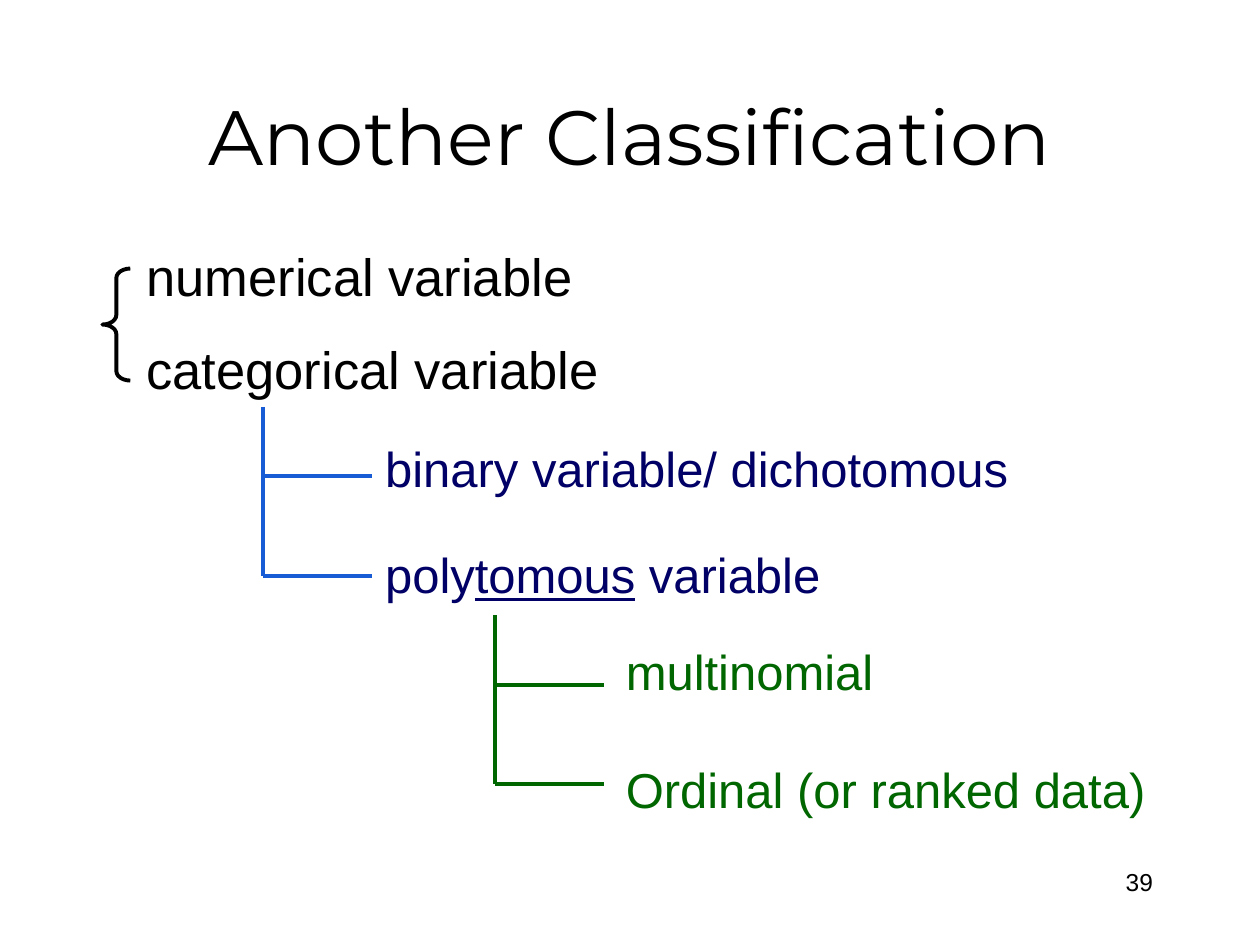
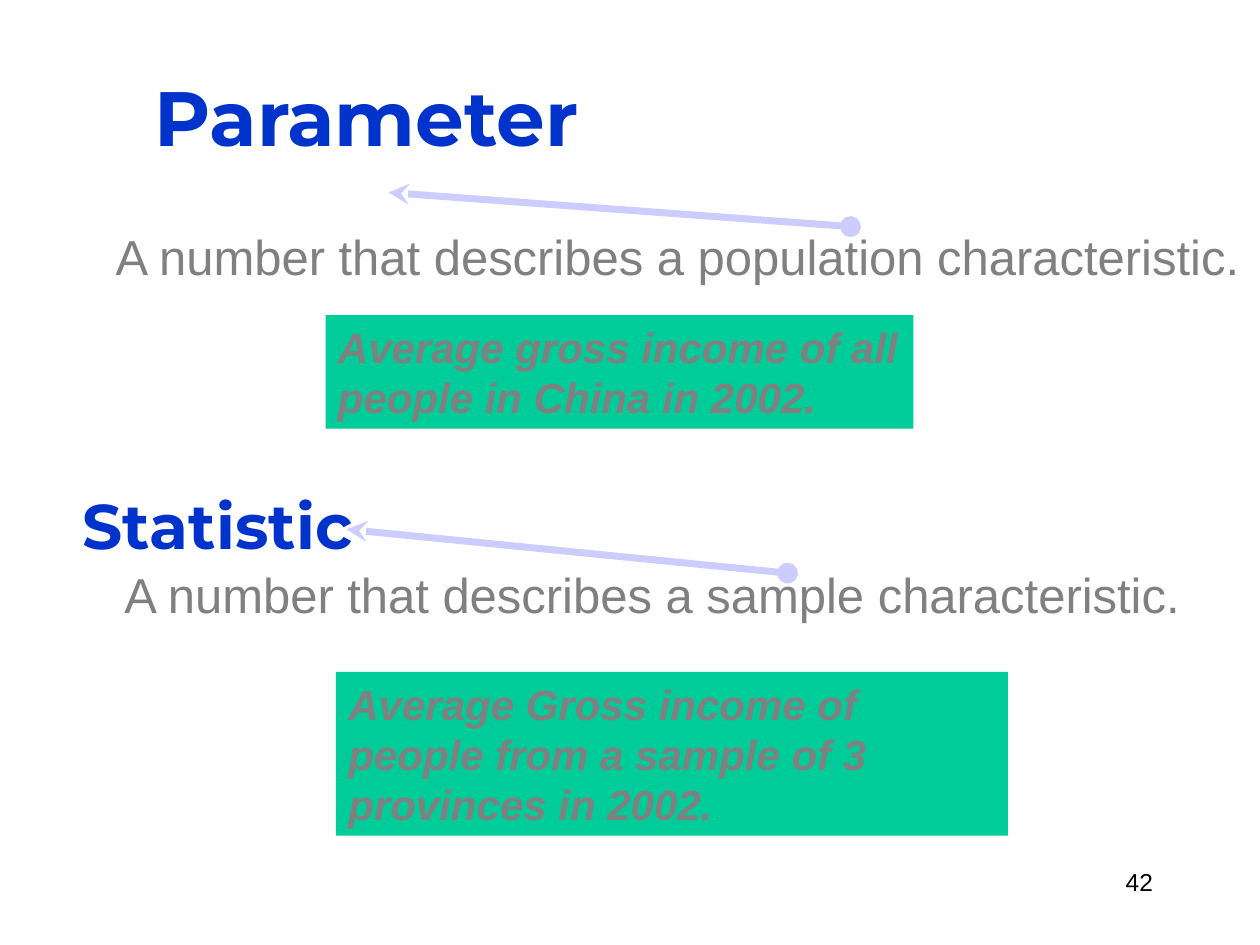
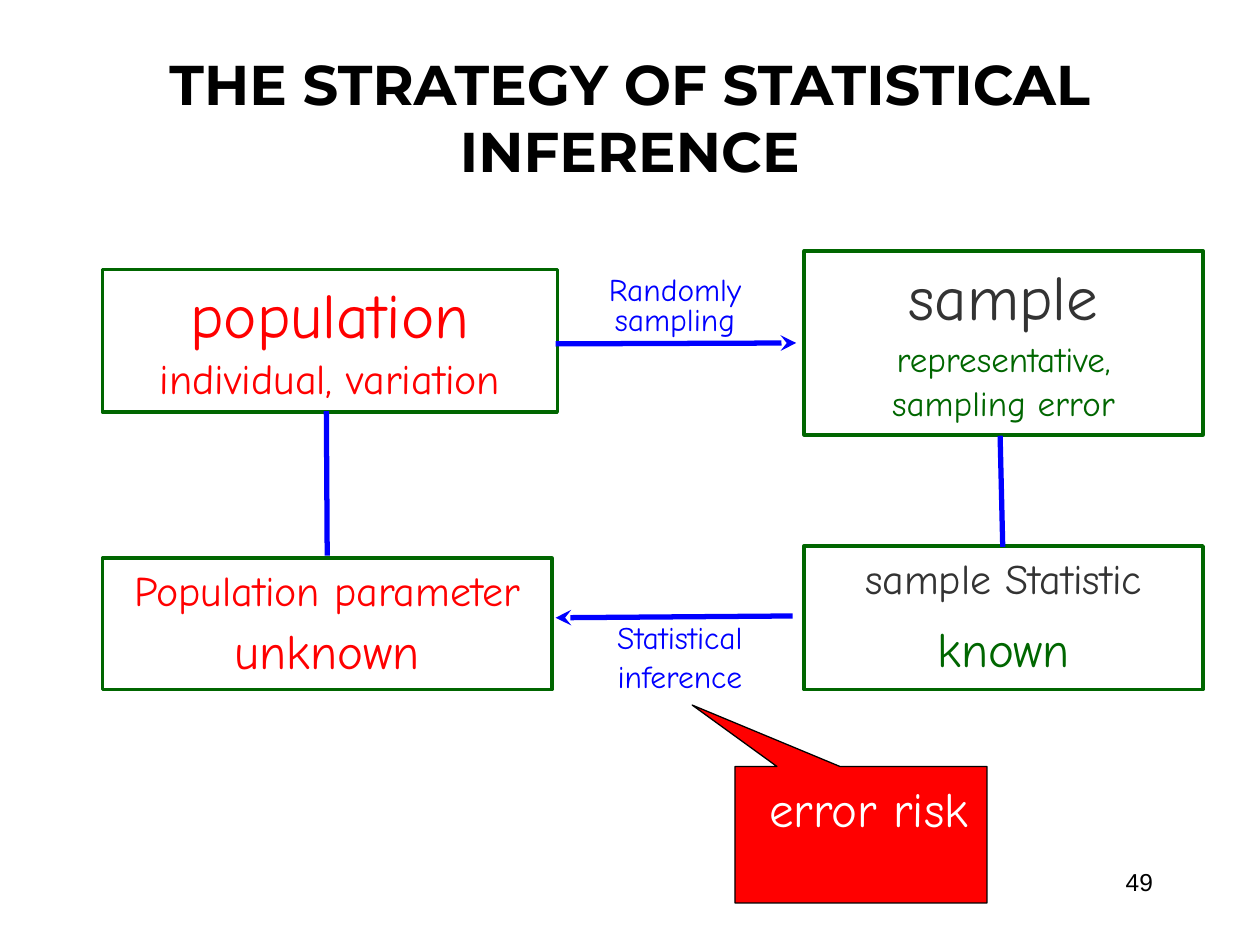
from pptx import Presentation
from pptx.dml.color import RGBColor as RGB
from pptx.enum.shapes import MSO_CONNECTOR as LINK, MSO_SHAPE as FORM
from pptx.enum.text import MSO_ANCHOR as ANCHOR, MSO_AUTO_SIZE as FIT, PP_ALIGN as ALIGN
from pptx.oxml.ns import qn
from pptx.oxml.xmlchemy import OxmlElement as Node
from pptx.util import Pt

# Shared colours and fonts
BLACK = RGB(0x00, 0x00, 0x00)
WHITE = RGB(0xFF, 0xFF, 0xFF)
GREY = RGB(0x80, 0x80, 0x80)
DARK = RGB(0x33, 0x33, 0x33)
NAVY = RGB(0x00, 0x00, 0x66)
ROYAL = RGB(0x00, 0x33, 0xCC)
SKY = RGB(0x17, 0x5B, 0xD5)
BLUE = RGB(0x00, 0x00, 0xFF)
LILAC = RGB(0xCC, 0xCC, 0xFF)
GREEN = RGB(0x00, 0x66, 0x00)
MINT = RGB(0x00, 0xCC, 0x99)
RED = RGB(0xFF, 0x00, 0x00)
HEAD, BODY, HAND = "Montserrat", "Arial", "Comic Neue"
MID = {"alignment": ALIGN.CENTER}


def write(box, face, rows, para={}, anchor=ANCHOR.TOP, **font):
    """Rows are (text, size, colour, paragraph values); _ marks underlined text."""
    frame = box.text_frame
    frame.auto_size, frame.word_wrap = FIT.NONE, True
    frame.vertical_anchor = anchor
    for n, (text, size, tint, own) in enumerate(rows):
        line = frame.add_paragraph() if n else frame.paragraphs[0]
        for key, value in {**para, **own}.items():
            setattr(line, key, value)
        for k, part in enumerate(text.split("_")):
            run = line.add_run()
            run.text = part
            look = {"name": face, "size": Pt(size), **font}
            if k % 2:
                look["underline"] = True
            for key, value in look.items():
                setattr(run.font, key, value)
            run.font.color.rgb = tint


def link(shapes, ends, tint, width, head=None, tail=None):
    line = shapes.add_connector(LINK.STRAIGHT, *map(Pt, ends))
    line.line.color.rgb, line.line.width = tint, Pt(width)
    props = line.element.spPr
    for tag, kind in (("a:headEnd", head), ("a:tailEnd", tail)):
        if kind:
            tip = Node(tag)
            tip.set("type", kind)
            props.find(qn("a:ln")).append(tip)
    props.append(Node("a:effectLst"))


deck = Presentation()
deck.slide_width, deck.slide_height = Pt(720), Pt(540)

# Titles and page numbers
pages = []
for layout, text, number, place, size, tint, bold, space in (
    (1, "Another Classification", "39", (54, 32, 612, 90), 44, BLACK, False, 1.0),
    (5, "Parameter", "42", (48, 49, 323, 47), 44, ROYAL, True, 0.7),
    (5, "THE STRATEGY OF STATISTICAL INFERENCE", "49", (54, 42, 612, 49), 32, BLACK, True, 1.0),
):
    page = deck.slides.add_slide(deck.slide_layouts[layout])
    title = page.shapes.title
    title.left, title.top, title.width, title.height = map(Pt, place)
    write(title, HEAD, [(text, size, tint, {"line_spacing": space})], MID, ANCHOR.MIDDLE, bold=bold)
    foot = page.shapes.add_textbox(*map(Pt, (516, 492, 150, 36)))
    write(foot, BODY, [(number, 14, BLACK, {"alignment": ALIGN.RIGHT})])
    pages.append(page)
tree, terms, plan = (page.shapes for page in pages)

# Classification: the two main kinds
kinds = pages[0].placeholders[1]
kinds.left, kinds.top, kinds.width, kinds.height = map(Pt, (43, 136, 583, 142))
write(kinds, BODY, [
    ("numerical variable", 30, BLACK, {"space_before": Pt(0)}),
    ("categorical variable", 30, BLACK, {"line_spacing": 1.2, "space_before": Pt(10)}),
])
for line in kinds.text_frame.paragraphs:
    props = line._p.get_or_add_pPr()
    props.set("marL", str(Pt(33.5)))
    props.set("indent", "0")
    props.append(Node("a:buNone"))
brace = tree.add_shape(FORM.LEFT_BRACE, *map(Pt, (58.5, 153.5, 16, 64)))
brace.shadow.inherit = False
brace.adjustments[0] = 0.34
brace.fill.background()
brace.line.color.rgb, brace.line.width = BLACK, Pt(2.25)

# Classification: subtypes and their branches
GAP = {"space_before": Pt(34)}
for place, first, second, tint, space in (
    ((213, 253.5, 464, 108), "binary variable/ dichotomous", "poly_tomous_ variable", NAVY, 0.8),
    ((350.5, 363, 315, 130), "multinomial", "Ordinal (or ranked data)", GREEN, 1.0),
):
    box = tree.add_textbox(*map(Pt, place))
    write(box, BODY, [(first, 28, tint, {}), (second, 28, tint, GAP)], {"line_spacing": space})
for x, top, mid, low, tint in ((150.5, 232.5, 272, 329, SKY), (283, 351.5, 391.5, 448, GREEN)):
    branch = tree.add_group_shape().shapes
    for ends in ((x, top, x, low), (x, mid, x + 62, mid), (x, low, x + 62, low)):
        link(branch, ends, tint, 2.25)

# Parameter and statistic: definitions
for place, text, face, size, tint, bold in (
    ((59, 126, 661, 41), "A number that describes a population characteristic.", BODY, 28, GREY, False),
    ((40, 274.5, 182, 50), "Statistic", HEAD, 36, ROYAL, True),
    ((64, 319, 626, 41), "A number that describes a sample characteristic.", BODY, 28, GREY, False),
):
    write(terms.add_textbox(*map(Pt, place)), face, [(text, size, tint, {})], bold=bold)

# Parameter and statistic: examples
for place, right, lines in (
    ((186, 180, 336, 65), 7.2, ("Average gross income of all", "people in China in 2002.")),
    ((192, 384, 384, 93.5), 18, ("Average Gross income of people from a sample of 3 provinces in 2002.",)),
):
    card = terms.add_shape(FORM.RECTANGLE, *map(Pt, place))
    card.shadow.inherit = False
    card.fill.solid()
    card.fill.fore_color.rgb = MINT
    card.line.fill.background()
    card.text_frame.margin_right = Pt(right)
    rows = [(text, 24, GREY, {}) for text in lines]
    write(card, BODY, rows, {"alignment": ALIGN.LEFT}, bold=True, italic=True)
for ends in ((486, 129.5, 222, 110), (450, 327.5, 198, 302.5)):
    link(terms, ends, LILAC, 4, "oval", "stealth")

# Inference: boxes
for place, side, rows in (
    ((58.5, 154, 260, 81.5), 7.2, (("population", 36, RED, 1.0), ("individual, variation", 24, RED, 0.5))),
    ((58.5, 319, 257, 75), 7.2, (("Population parameter", 24, RED, 1.0), ("unknown", 28, RED, 0.6))),
    ((459.5, 143.5, 228, 105), 0, (("sample", 36, DARK, 1.0), ("representative,", 20, GREEN, 0.6),
                                   ("sampling error", 20, GREEN, 0.6))),
    ((459.5, 312, 228, 82), 7.2, (("sample Statistic", 24, DARK, 1.0), ("known", 28, GREEN, 0.8))),
):
    box = plan.add_shape(FORM.RECTANGLE, *map(Pt, place))
    box.shadow.inherit = False
    box.fill.background()
    box.line.color.rgb, box.line.width = GREEN, Pt(2)
    box.text_frame.margin_left = box.text_frame.margin_right = Pt(side)
    write(box, HAND, [
        (text, size, tint, {"line_spacing": space, "space_before": Pt(0.55 * size if n else 0)})
        for n, (text, size, tint, space) in enumerate(rows)
    ], MID)

# Inference: steps between the boxes
for ends, tail in (
    ((317.5, 196.5, 455, 196), "stealth"),
    ((186.5, 235, 187, 317.5), None),
    ((571.5, 249, 573, 312.5), None),
    ((453, 352, 317.5, 353), "stealth"),
):
    link(plan, ends, BLUE, 3, tail=tail)
for place, lines in (
    ((336, 155, 99.5, 42), ("Randomly sampling",)),
    ((332.5, 354, 112, 47.5), ("Statistical", "inference")),
):
    rows = [(text, 18, BLUE, {"space_before": Pt(5 if n else 0)}) for n, text in enumerate(lines)]
    write(plan.add_textbox(*map(Pt, place)), HAND, rows, {**MID, "line_spacing": 0.8})

# Inference: warning
risk = plan.add_shape(FORM.RECTANGULAR_CALLOUT, *map(Pt, (420, 438, 144, 78)))
risk.shadow.inherit = False
risk.adjustments[0], risk.adjustments[1] = -0.67, -0.95
risk.fill.solid()
risk.fill.fore_color.rgb = RED
risk.line.color.rgb, risk.line.width = BLACK, Pt(0.75)
risk.text_frame.margin_left = Pt(16)
write(risk, HAND, [("error risk", 28, WHITE, {"line_spacing": 1.1})], MID)

deck.save("out.pptx")
